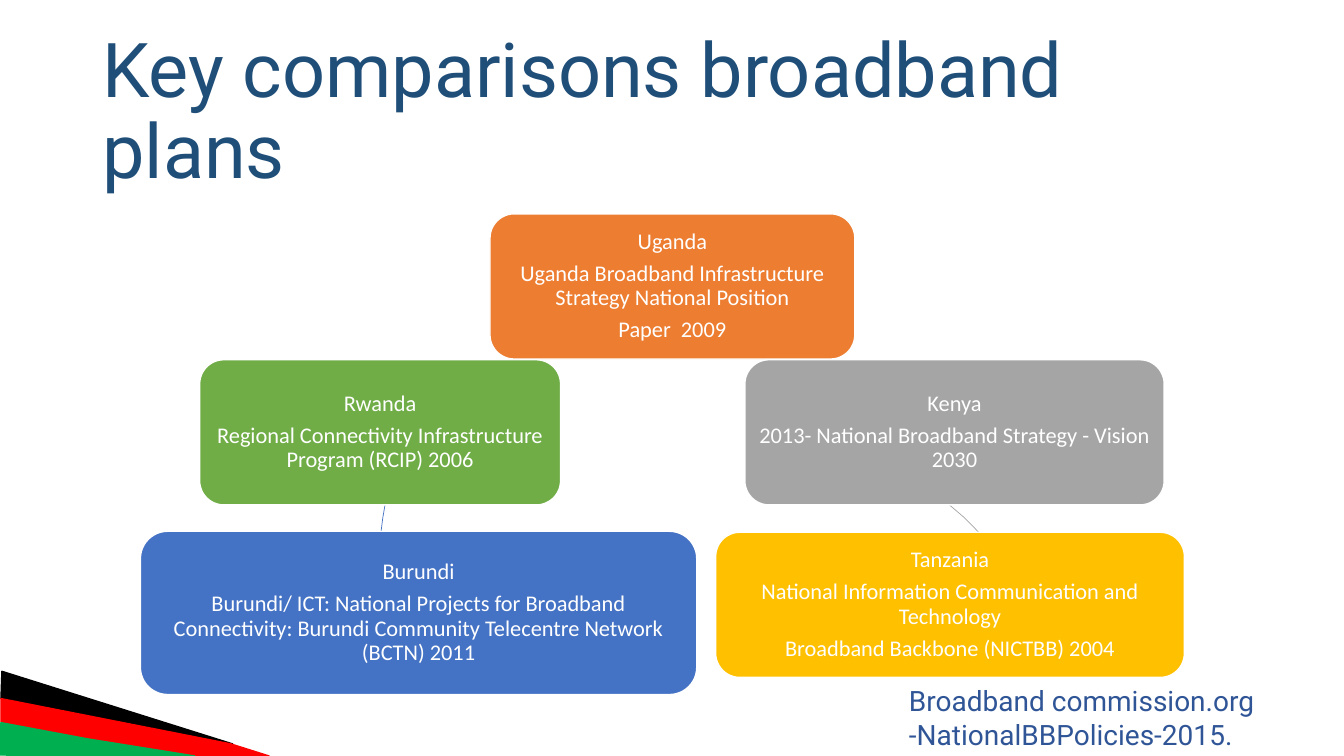
from dataclasses import dataclass

import pptx
import pptx.dml.color
import pptx.enum.shapes
import pptx.enum.text
import pptx.util

Pt = pptx.util.Pt
Point = tuple[float, float]


@dataclass(frozen=True)
class Theme:
    title: str = "1F4E79"
    source: str = "2F5597"
    white: str = "FFFFFF"
    orange: str = "ED7D31"
    gray: str = "A5A5A5"
    gold: str = "FFC000"
    blue: str = "4472C4"
    green: str = "70AD47"
    ribbon_black: str = "000000"
    ribbon_red: str = "FF0000"
    ribbon_green: str = "00B050"
    heading_font: str = "Roboto"
    body_font: str = "Calibri"
    title_size: float = 54
    source_size: float = 20
    card_size: float = 16


THEME = Theme()


@dataclass(frozen=True)
class Card:
    left: float
    top: float
    width: float
    color: str
    lines: tuple[str, ...]
    height: float = 103.7


@dataclass(frozen=True)
class Outline:
    points: tuple[Point, ...]
    color: str
    line_width: float
    filled: bool


RIBBONS = (
    Outline(((123.8, 523.4), (0.7, 499), (1.4, 479.5), (166.3, 531.4)),
            THEME.ribbon_black, 1, True),
    Outline(((123.1, 540), (0.7, 515.5), (0.7, 499), (164.9, 531.4), (192.2, 540)),
            THEME.ribbon_red, 1, True),
    Outline(((50.4, 540), (0, 539.3), (0.7, 516.2), (62.6, 527.8), (139, 540)),
            THEME.ribbon_green, 1, True),
)
ARCS = (
    Outline(((678.2, 360.7), (689, 369.9), (699.1, 380.2)), THEME.gray, 0.5, False),
    Outline(((272.2, 379.4), (273.4, 370), (275, 360.7)), THEME.blue, 0.5, False),
)
CARDS = (
    Card(350, 152.8, 260.6, THEME.orange,
         ("Uganda", "Uganda Broadband Infrastructure Strategy National Position",
          "Paper  2009")),
    Card(532.1, 257, 299.5, THEME.gray,
         ("Kenya", "2013- National Broadband Strategy - Vision 2030")),
    Card(511.2, 380.2, 334.8, THEME.gold,
         ("Tanzania", "National Information Communication and Technology",
          "Broadband Backbone (NICTBB) 2004")),
    Card(100.3, 379.5, 397.4, THEME.blue,
         ("Burundi", "Burundi/ ICT: National Projects for Broadband Connectivity: "
          "Burundi Community Telecentre Network (BCTN) 2011"), 116.6),
    Card(142.6, 257, 257.8, THEME.green,
         ("Rwanda", "Regional Connectivity Infrastructure Program (RCIP) 2006")),
)


def rgb(color: str) -> pptx.dml.color.RGBColor:
    return pptx.dml.color.RGBColor.from_string(color)


def add_span(para, text: str, font: str, size: float, color: str) -> None:
    span = para.add_run()
    span.text = text
    span.font.name = font
    span.font.size = Pt(size)
    span.font.color.rgb = rgb(color)


def draw_outline(page, outline: Outline) -> None:
    start, *rest = [(Pt(x), Pt(y)) for x, y in outline.points]
    builder = page.shapes.build_freeform(*start, scale=1.0)
    builder.add_line_segments(rest, close=outline.filled)
    shape = builder.convert_to_shape()
    shape.shadow.inherit = False
    if outline.filled:
        shape.fill.solid()
        shape.fill.fore_color.rgb = rgb(outline.color)
    else:
        shape.fill.background()
    shape.line.color.rgb = rgb(outline.color)
    shape.line.width = Pt(outline.line_width)


def draw_card(page, card: Card) -> None:
    box = page.shapes.add_shape(
        pptx.enum.shapes.MSO_SHAPE.ROUNDED_RECTANGLE,
        Pt(card.left), Pt(card.top), Pt(card.width), Pt(card.height))
    box.shadow.inherit = False
    box.fill.solid()
    box.fill.fore_color.rgb = rgb(card.color)
    box.line.color.rgb = rgb(THEME.white)
    box.line.width = Pt(1)
    frame = box.text_frame
    frame.word_wrap = True
    frame.vertical_anchor = pptx.enum.text.MSO_ANCHOR.MIDDLE
    frame.margin_left = frame.margin_right = Pt(4.8)
    frame.margin_top = frame.margin_bottom = Pt(4.8)
    for index, line in enumerate(card.lines):
        para = frame.add_paragraph() if index else frame.paragraphs[0]
        para.alignment = pptx.enum.text.PP_ALIGN.CENTER
        para.line_spacing = 0.9
        para.space_after = Pt(5.6)
        add_span(para, line, THEME.body_font, THEME.card_size, THEME.white)


def draw_text(page, left: float, top: float, width: float, height: float, text: str,
              size: float, color: str, anchor: pptx.enum.text.MSO_ANCHOR,
              line_spacing: float) -> None:
    box = page.shapes.add_textbox(Pt(left), Pt(top), Pt(width), Pt(height))
    box.text_frame.word_wrap = True
    box.text_frame.vertical_anchor = anchor
    para = box.text_frame.paragraphs[0]
    para.line_spacing = line_spacing
    add_span(para, text, THEME.heading_font, size, color)


def main() -> None:
    deck = pptx.Presentation()
    deck.slide_width, deck.slide_height = Pt(960), Pt(540)
    page = deck.slides.add_slide(deck.slide_layouts[6])

    # Corner ribbons
    for ribbon in RIBBONS:
        draw_outline(page, ribbon)

    # Title
    draw_text(page, 66, 28.8, 828, 104.4, "Key comparisons broadband plans",
              THEME.title_size, THEME.title, pptx.enum.text.MSO_ANCHOR.MIDDLE, 0.9)

    # Country cycle
    for arc in ARCS:
        draw_outline(page, arc)
    for card in CARDS:
        draw_card(page, card)

    # Source reference
    draw_text(page, 642.2, 484.6, 307.4, 55.4,
              "Broadband commission.org -NationalBBPolicies-2015.",
              THEME.source_size, THEME.source, pptx.enum.text.MSO_ANCHOR.TOP, 1.0)

    deck.save("out.pptx")


if __name__ == "__main__":
    main()
